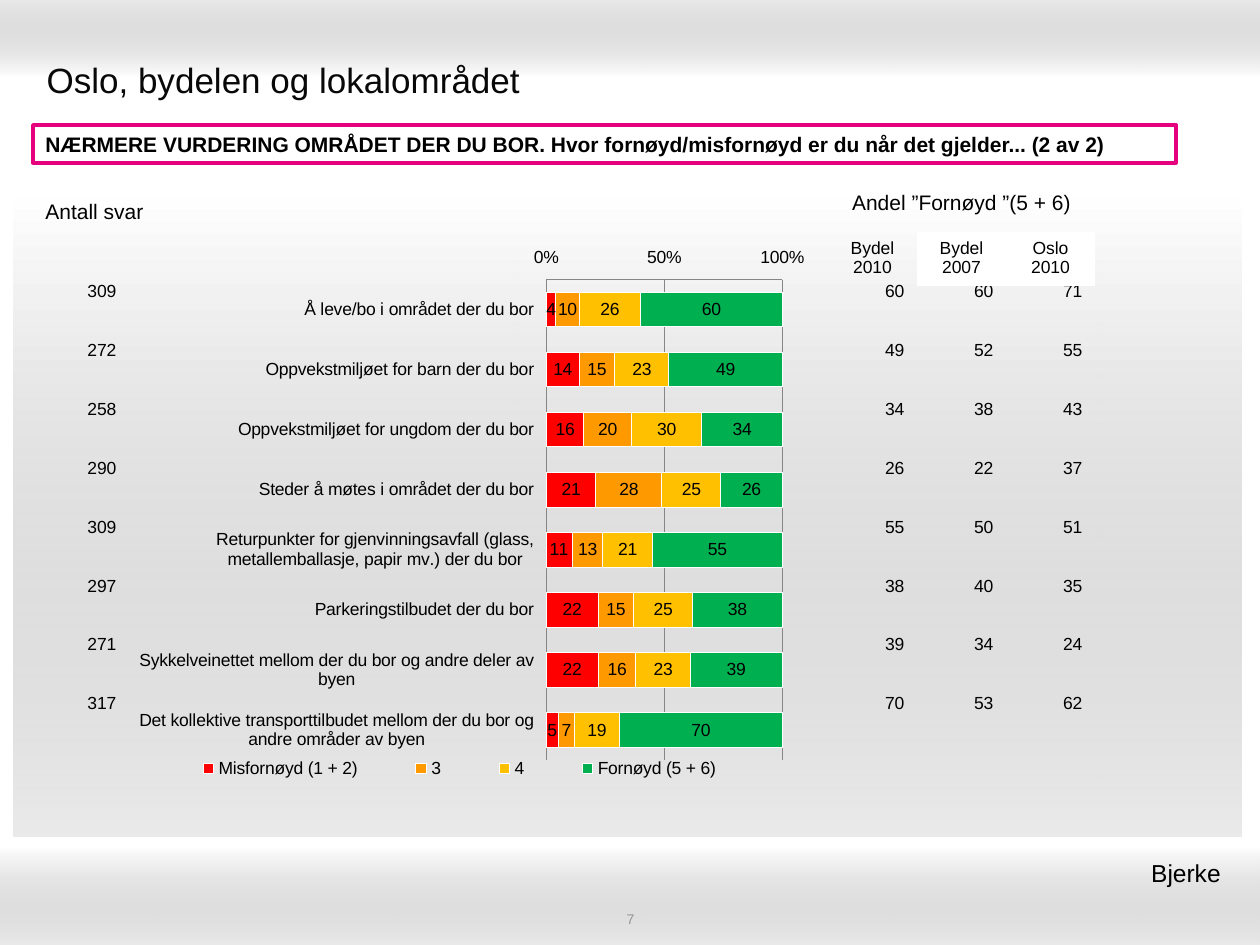
import pptx
import pptx.chart.data
import pptx.dml.color
import pptx.enum.chart
import pptx.enum.shapes
import pptx.enum.text
import pptx.oxml
import pptx.oxml.ns
import pptx.util

# Content
TITLE = "Oslo, bydelen og lokalområdet"
QUESTION = ("NÆRMERE VURDERING OMRÅDET DER DU BOR. "
            "Hvor fornøyd/misfornøyd er du når det gjelder... (2 av 2)")
DISTRICT = "Bjerke "
PAGE = "7"
COUNT_HEADING = "Antall svar"
SHARE_HEADING = "Andel ”Fornøyd ”(5 + 6)"
SHARE_COLUMNS = ["Bydel\n2010", "Bydel\n2007", "Oslo\n2010"]
RATINGS = [("Misfornøyd (1 + 2)", "FF0000"), ("3", "FF9900"),
           ("4", "FFC000"), ("Fornøyd (5 + 6)", "00B050")]
# Topic, number of answers, rating percentages, satisfied shares
TOPICS = [
    ("Å leve/bo i området der du bor", 309, (4, 10, 26, 60), (60, 60, 71)),
    ("Oppvekstmiljøet for barn der du bor", 272, (14, 15, 23, 49), (49, 52, 55)),
    ("Oppvekstmiljøet for ungdom der du bor", 258, (16, 20, 30, 34), (34, 38, 43)),
    ("Steder å møtes i området der du bor", 290, (21, 28, 25, 26), (26, 22, 37)),
    ("Returpunkter for gjenvinningsavfall (glass, metallemballasje, papir mv.) der du bor",
     309, (11, 13, 21, 55), (55, 50, 51)),
    ("Parkeringstilbudet der du bor", 297, (22, 15, 25, 38), (38, 40, 35)),
    ("Sykkelveinettet mellom der du bor og andre deler av byen",
     271, (22, 16, 23, 39), (39, 34, 24)),
    ("Det kollektive transporttilbudet mellom der du bor og andre områder av byen",
     317, (5, 7, 19, 70), (70, 53, 62)),
]
# Box, gradient angle (counter-clockwise)
BANDS = [((0, 0, 1260, 78), 90), ((0, 847, 1260, 98), 270), ((14, 197, 1227, 640), 270)]

FONT = "Arial"
NO_GRID_STYLE = "{2D5ABB26-0587-4C30-8999-92F81FD0307C}"
ALIGN = pptx.enum.text.PP_ALIGN
COLUMN, ROW = 89, 59
TABLE_TOP, SHARE_LEFT = 275, 828


def px(length):
    return pptx.util.Emu(round(length * 914400 / 126))


def box(*lengths):
    return [px(length) for length in lengths]


def rgb(value):
    return pptx.dml.color.RGBColor.from_string(value)


def write(holder, text, size=10, color="000000", bold=False, align=ALIGN.LEFT):
    frame = holder.text_frame
    frame.text = text
    frame.word_wrap = True
    frame.vertical_anchor = pptx.enum.text.MSO_ANCHOR.MIDDLE
    for paragraph in frame.paragraphs:
        paragraph.alignment = align
        font = paragraph.font
        font.name, font.size, font.bold = FONT, pptx.util.Pt(size), bold
        font.color.rgb = rgb(color)


def add_band(slide, place, angle):
    band = slide.shapes.add_shape(pptx.enum.shapes.MSO_SHAPE.RECTANGLE, *box(*place))
    band.shadow.inherit = False
    band.line.fill.background()
    band.fill.gradient()
    band.fill.gradient_angle = angle
    for stop, color, position in zip(band.fill.gradient_stops, ("FFFFFF", "999999"), (0, 1)):
        stop.color.rgb = rgb(color)
        stop.position = position
    grey = list(band._element.iter(pptx.oxml.ns.qn("a:srgbClr")))[-1]
    grey.append(pptx.oxml.parse_xml(
        f'<a:alpha {pptx.oxml.ns.nsdecls("a")} val="20000"/>'))


def add_grid(slide, left, top, widths, heights):
    frame = slide.shapes.add_table(len(heights), len(widths),
                                   *box(left, top, sum(widths), sum(heights)))
    grid = frame.table
    grid.first_row = grid.horz_banding = False
    grid._tbl.tblPr.find(pptx.oxml.ns.qn("a:tableStyleId")).text = NO_GRID_STYLE
    for column, width in zip(grid.columns, widths):
        column.width = px(width)
    for row, height in zip(grid.rows, heights):
        row.height = px(height)
    for cell in grid.iter_cells():
        cell.fill.background()
    return grid


def add_numbers(slide, left, rows):
    grid = add_grid(slide, left, TABLE_TOP, [COLUMN] * len(rows[0]), [ROW] * len(rows))
    for r, row in enumerate(rows):
        for c, number in enumerate(row):
            write(grid.cell(r, c), str(number), align=ALIGN.RIGHT)


def place_in_chart(part, x, y, w, h, inner=False):
    target = '<c:layoutTarget val="inner"/>' if inner else ""
    layout = pptx.oxml.parse_xml(
        f'<c:layout {pptx.oxml.ns.nsdecls("c")}><c:manualLayout>{target}'
        '<c:xMode val="edge"/><c:yMode val="edge"/>'
        f'<c:x val="{x}"/><c:y val="{y}"/><c:w val="{w}"/><c:h val="{h}"/>'
        '</c:manualLayout></c:layout>')
    old = part.find(pptx.oxml.ns.qn("c:layout"))
    if old is not None:
        part.remove(old)
    # Layout follows the legend position, and comes first in the plot area
    position = part.find(pptx.oxml.ns.qn("c:legendPos"))
    part.insert(0 if position is None else 1, layout)


def add_rating_chart(slide):
    data = pptx.chart.data.CategoryChartData()
    data.categories = [topic[0] for topic in TOPICS]
    for i, (rating, _) in enumerate(RATINGS):
        data.add_series(rating, [topic[2][i] for topic in TOPICS])
    kinds = pptx.enum.chart
    chart = slide.shapes.add_chart(kinds.XL_CHART_TYPE.BAR_STACKED,
                                   *box(123, 234, 694, 572), data).chart
    chart.has_title = False
    chart.font.name, chart.font.size = FONT, pptx.util.Pt(10)
    chart.font.color.rgb = rgb("000000")

    plot = chart.plots[0]
    plot.gap_width, plot.overlap, plot.vary_by_categories = 75, 100, False
    for series, (_, color) in zip(plot.series, RATINGS):
        series.format.fill.solid()
        series.format.fill.fore_color.rgb = rgb(color)
        series.format.line.color.rgb = rgb("FFFFFF")
        labels = series.data_labels
        labels.show_value = True
        labels.number_format, labels.number_format_is_linked = "0", False

    topics, percent = chart.category_axis, chart.value_axis
    topics.reverse_order = True
    topics.major_tick_mark = kinds.XL_TICK_MARK.NONE
    percent.major_tick_mark = kinds.XL_TICK_MARK.INSIDE
    percent.minimum_scale, percent.maximum_scale, percent.major_unit = 0, 100, 50
    percent.has_major_gridlines = True
    percent.tick_labels.number_format = "General\\%"
    percent.tick_labels.number_format_is_linked = False
    for axis in (topics, percent):
        axis.tick_label_position = kinds.XL_TICK_LABEL_POSITION.LOW
    for ruled in (topics, percent, percent.major_gridlines):
        ruled.format.line.color.rgb = rgb("868686")
        ruled.format.line.width = pptx.util.Pt(0.75)

    chart.has_legend = True
    chart.legend.position = kinds.XL_LEGEND_POSITION.BOTTOM
    chart.legend.include_in_layout = False
    place_in_chart(chart.legend._element, 0.04, 0.91, 0.89, 0.05)
    place_in_chart(chart._chartSpace.chart.plotArea, 0.61, 0.08, 0.34, 0.84, inner=True)


def main():
    deck = pptx.Presentation()
    deck.slide_width, deck.slide_height = box(1260, 945)
    slide = deck.slides.add_slide(deck.slide_layouts[5])
    shapes = slide.shapes

    # Background bands, with the title moved in front of them
    title = shapes.title
    for place, angle in BANDS:
        add_band(slide, place, angle)
    shapes._spTree.append(title._element)
    title.left, title.top, title.width, title.height = box(34, 45, 1191, 69)
    write(title, TITLE, size=20, color="080808")

    # Survey question
    question = shapes.add_shape(pptx.enum.shapes.MSO_SHAPE.RECTANGLE, *box(33, 125, 1143, 38))
    question.shadow.inherit = False
    question.fill.solid()
    question.fill.fore_color.rgb = rgb("FFFFFF")
    question.line.color.rgb = rgb("E7007E")
    question.line.width = pptx.util.Pt(2)
    write(question, QUESTION, size=12, bold=True)

    # Chart and the number columns beside it
    add_rating_chart(slide)
    add_numbers(slide, 40, [[topic[1]] for topic in TOPICS])
    add_numbers(slide, SHARE_LEFT, [topic[3] for topic in TOPICS])

    # Column headings
    count_heading = add_grid(slide, 5, 194, [179], [74])
    write(count_heading.cell(0, 0), COUNT_HEADING, size=12, align=ALIGN.CENTER)
    share_heading = add_grid(slide, SHARE_LEFT, 185, [COLUMN] * 3, [47, 54])
    share_heading.cell(0, 0).merge(share_heading.cell(0, 2))
    write(share_heading.cell(0, 0), SHARE_HEADING, size=12, align=ALIGN.CENTER)
    for c, heading in enumerate(SHARE_COLUMNS):
        cell = share_heading.cell(1, c)
        write(cell, heading, align=ALIGN.CENTER)
        if c:
            cell.fill.solid()
            cell.fill.fore_color.rgb = rgb("FFFFFF")

    # Footer
    district = shapes.add_textbox(*box(769, 851, 471, 43))
    write(district, DISTRICT, size=14, align=ALIGN.RIGHT)
    page = shapes.add_textbox(*box(431, 910, 399, 18))
    page.text_frame.margin_top = page.text_frame.margin_bottom = 0
    write(page, PAGE, size=8, color="969696", align=ALIGN.CENTER)

    deck.save("out.pptx")


if __name__ == "__main__":
    main()
